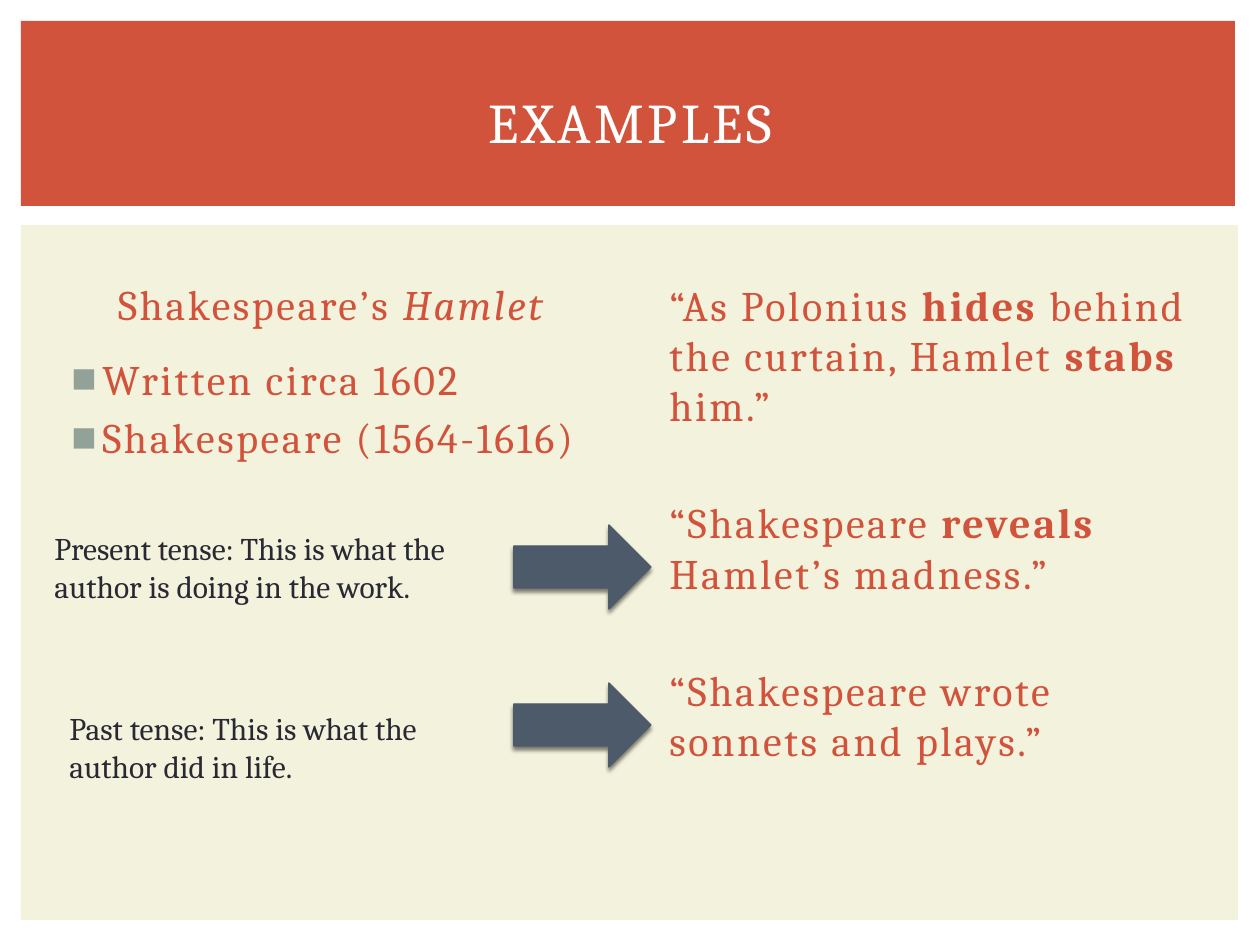
import lxml.etree
import pptx
import pptx.dml.color
import pptx.enum.shapes
import pptx.enum.text
import pptx.oxml
import pptx.oxml.ns
import pptx.util

PX = 914400 // 126
NS = pptx.oxml.ns.nsdecls("a")
ALIGN = pptx.enum.text.PP_ALIGN
ANCHOR = pptx.enum.text.MSO_ANCHOR
SHAPE = pptx.enum.shapes.MSO_SHAPE
RED, CREAM, WHITE, SLATE, INK = "D2533C", "F3F2DC", "FFFFFF", "4C5A6A", "292934"


def rgb(value):
    """Turn a hex string into a colour."""
    return pptx.dml.color.RGBColor.from_string(value)


def add_text(box, paragraphs, size, color, spacing=0, align=ALIGN.LEFT,
             anchor=ANCHOR.TOP, before=0):
    """Add a wrapped text box; each paragraph is a list of (text, style) runs."""
    frame = slide.shapes.add_textbox(*[v * PX for v in box]).text_frame
    frame.word_wrap = True
    frame.vertical_anchor = anchor
    for index, runs in enumerate(paragraphs):
        paragraph = frame.paragraphs[0] if index == 0 else frame.add_paragraph()
        paragraph.alignment = align
        paragraph.space_before = pptx.util.Pt(before if index else 0)
        paragraph.font.name = "Cambria"
        paragraph.font.size = pptx.util.Pt(size)
        paragraph.font.color.rgb = rgb(color)
        for text, style in runs:
            run = paragraph.add_run()
            run.text = text
            if style == "bold":
                run.font.bold = True
            elif style == "italic":
                run.font.italic = True
            if spacing:
                run._r.get_or_add_rPr().set("spc", str(spacing))
    return frame


deck = pptx.Presentation()
deck.slide_width, deck.slide_height = 1260 * PX, 945 * PX
slide = deck.slides.add_slide(deck.slide_layouts[6])

# Background panels
for box, color in [((21, 225, 1217, 695), CREAM), ((21, 21, 1214, 185), RED)]:
    panel = slide.shapes.add_shape(SHAPE.RECTANGLE, *[v * PX for v in box])
    panel.shadow.inherit = False
    panel.fill.solid()
    panel.fill.fore_color.rgb = rgb(color)
    panel.line.fill.background()

add_text((53, 49, 1155, 145), [[("EXAMPLES", "")]], 32, WHITE, 200,
         ALIGN.CENTER, ANCHOR.MIDDLE)

# Left column
add_text((52, 247, 557, 88), [[("Shakespeare’s ", ""), ("Hamlet", "italic")]],
         24, RED, 150, ALIGN.CENTER, ANCHOR.BOTTOM)
facts = add_text((52, 347, 640, 508),
                 [[("Written circa 1602", "")], [("Shakespeare (1564-1616)", "")]],
                 24, RED, 150, before=4.8)
for fact in facts.paragraphs:
    properties = fact._p.get_or_add_pPr()
    properties.set("marL", str(38 * PX))
    properties.set("indent", str(-31 * PX))
    font_defaults = properties.find(pptx.oxml.ns.qn("a:defRPr"))
    for bullet in (f'<a:buClr {NS}><a:srgbClr val="93A299"/></a:buClr>',
                   f'<a:buFont {NS} typeface="Arial"/>',
                   f'<a:buChar {NS} char="■"/>'):
        font_defaults.addprevious(pptx.oxml.parse_xml(bullet))

# Right column, with a wide gap between the quotations
quotes = [
    [("“As Polonius ", ""), ("hides ", "bold"), ("behind the curtain, Hamlet ", ""),
     ("stabs", "bold"), (" him.”", "")],
    [("“Shakespeare ", ""), ("reveals ", "bold"), ("Hamlet’s madness.”", "")],
    [("“Shakespeare wrote sonnets and plays.”", "")],
]
quotations = add_text((651, 273, 557, 508), quotes, 24, RED, 150, before=38)
for quotation in quotations.paragraphs:
    quotation._p.get_or_add_pPr().set("marL", str(6 * PX))

# Tense notes and their arrows
notes = [
    (525, (42, 523, 472, 89),
     ["Present tense: This is what the author is doing in the work."]),
    (683, (57, 703, 525, 89), ["Past tense: This is what the ", "author did in life."]),
]
for arrow_top, note_box, lines in notes:
    arrow = slide.shapes.add_shape(SHAPE.RIGHT_ARROW, 514 * PX, arrow_top * PX,
                                   137 * PX, 84 * PX)
    arrow.fill.solid()
    arrow.fill.fore_color.rgb = rgb(SLATE)
    arrow.line.color.rgb = rgb(SLATE)
    arrow.line.width = pptx.util.Pt(0.79)
    arrow.shadow.inherit = False
    effects = arrow._element.spPr.find(pptx.oxml.ns.qn("a:effectLst"))
    effects.append(pptx.oxml.parse_xml(
        f'<a:outerShdw {NS} blurRad="31750" dist="25400" dir="5400000" rotWithShape="0">'
        '<a:srgbClr val="000000"><a:alpha val="50000"/></a:srgbClr></a:outerShdw>'))
    add_text(note_box, [[(line, "")] for line in lines], 18, INK)

deck.save("out.pptx")
